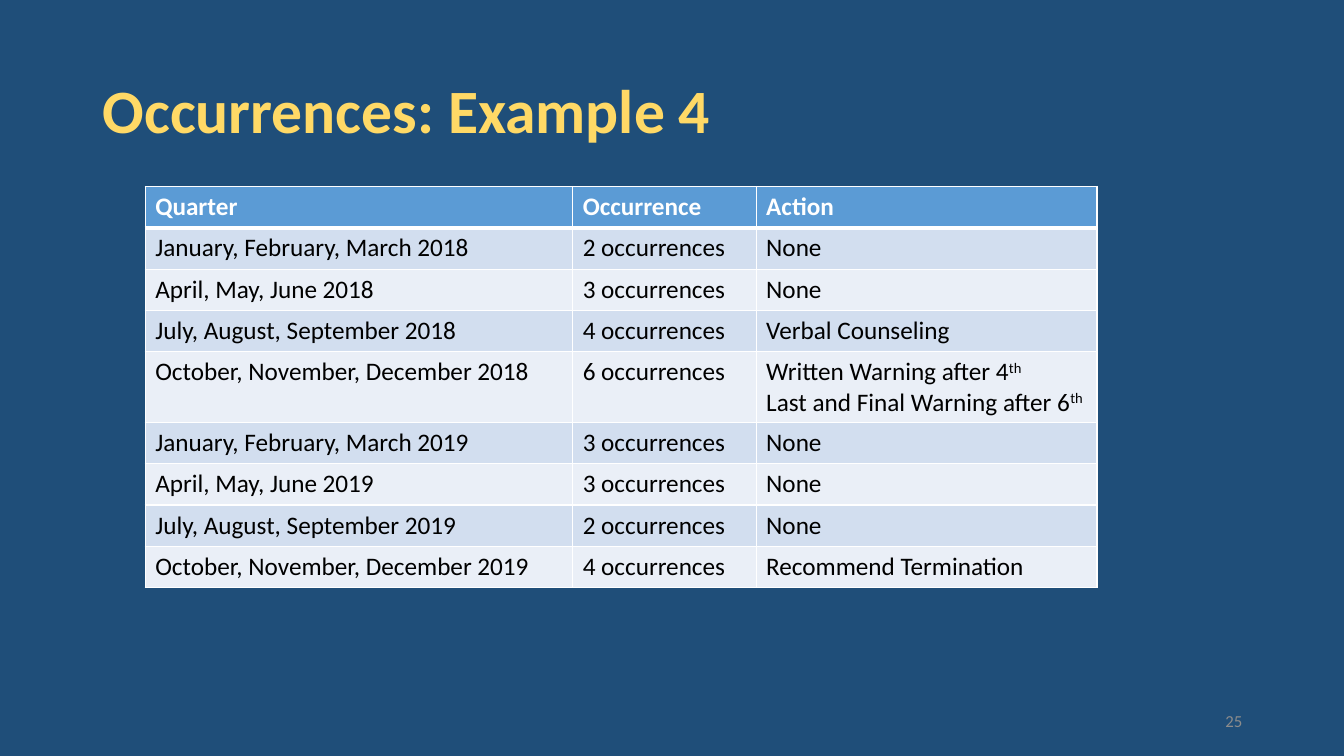
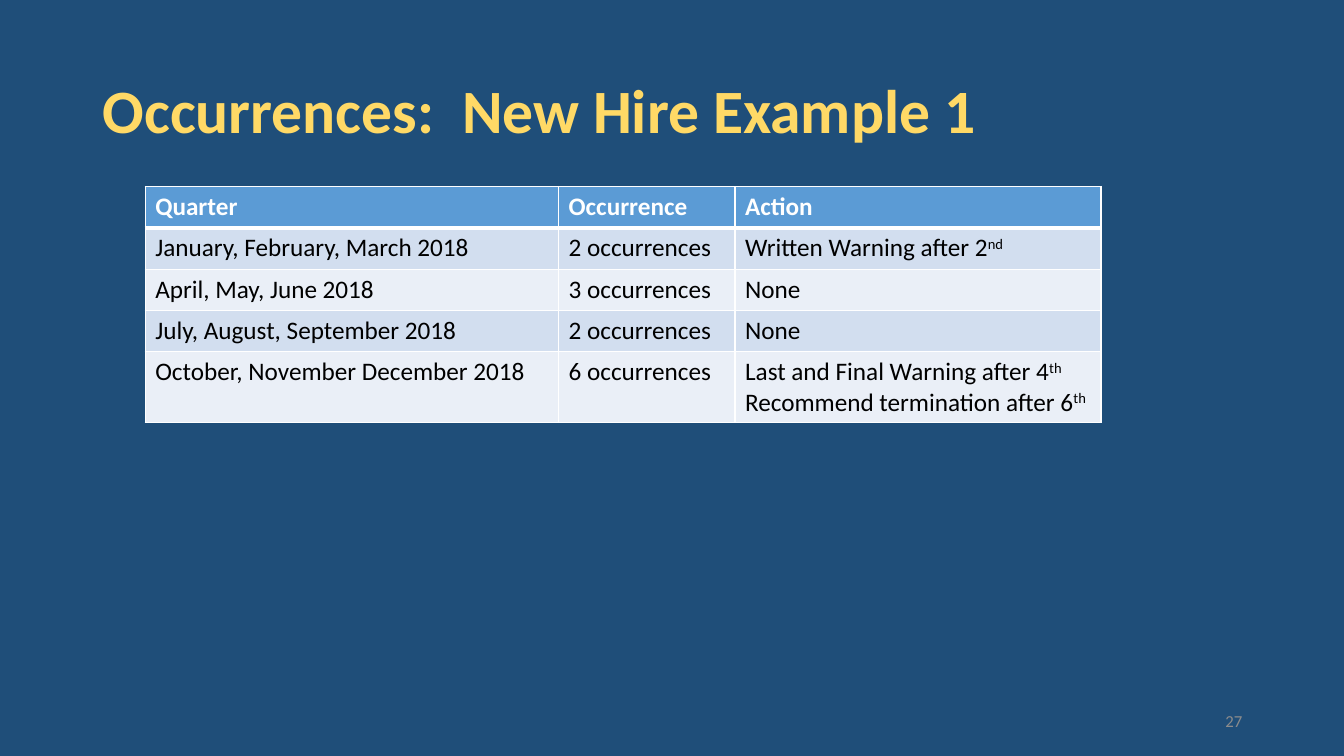
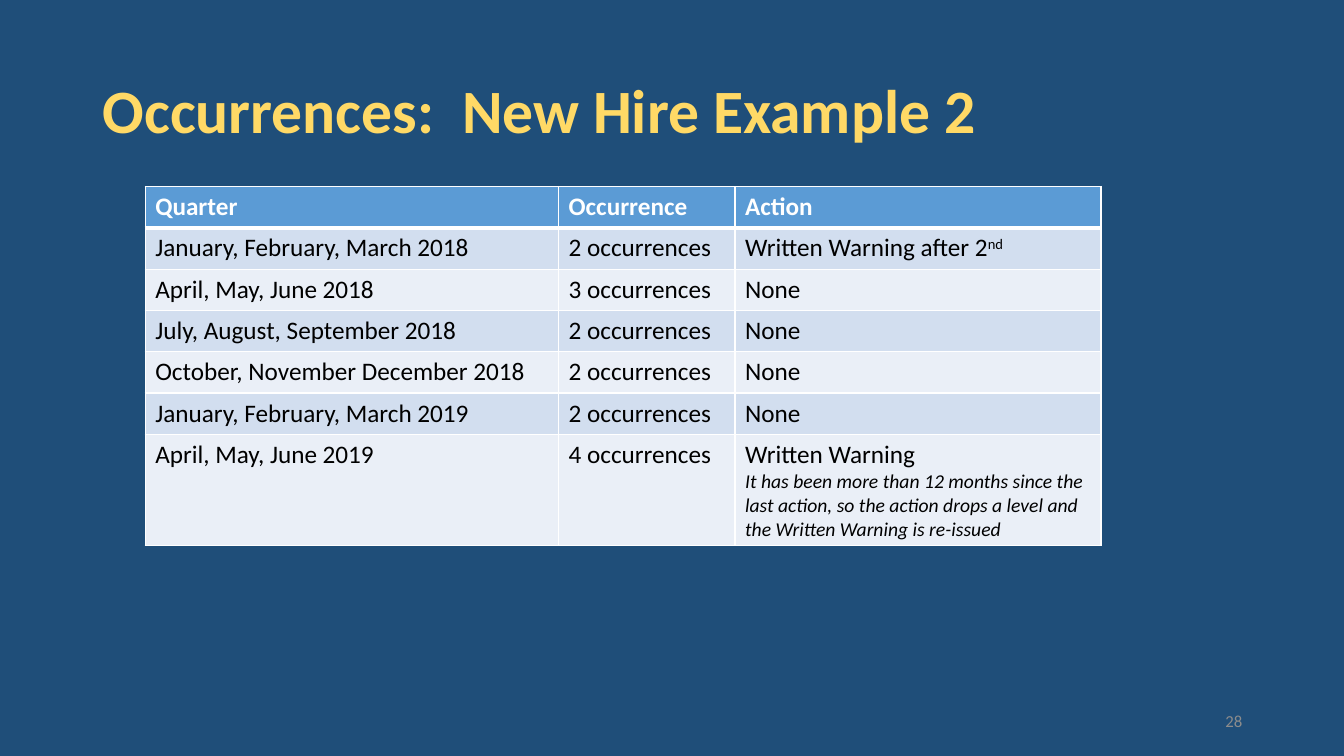
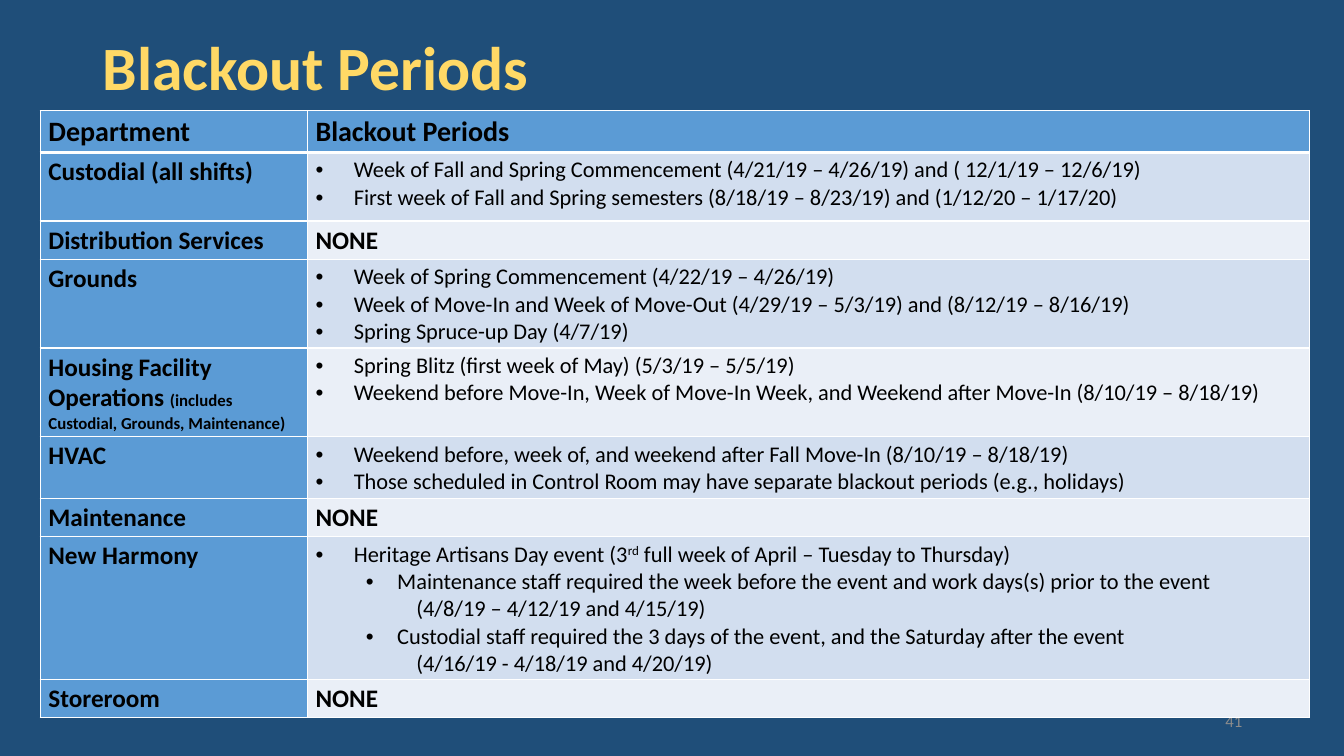
from lxml.etree import SubElement
from pptx import Presentation
from pptx.dml.color import RGBColor
from pptx.enum.text import MSO_ANCHOR, PP_ALIGN
from pptx.oxml import parse_xml
from pptx.oxml.ns import nsdecls, qn
from pptx.util import Pt

PX = 9144  # 100 px to the inch
FACE = "Calibri"
INK = {
    "back": "1F4E79", "title": "FFD966", "head": "5B9BD5",
    "odd": "D2DEEF", "even": "EAEFF7",
    "white": "FFFFFF", "black": "000000", "grey": "8C8C8C",
}
# Left margin, first-line indent, tab stop and bullet of each list style
LISTS = {
    "dot": (38, -38, 50, "•"),
    "sub": (81, -31, 100, "•"),
    "note": (100, 0, None, None),
}

HEADS = ("Quarter", "Occurrence", "Action")
COUNTS = [
    ("Occurrences: Example 4", 25, (424, 182, 338), [
        ("January, February, March 2018", 2, "None"),
        ("April, May, June 2018", 3, "None"),
        ("July, August, September 2018", 4, "Verbal Counseling"),
        ("October, November, December 2018", 6,
         "Written Warning after 4^th", "Last and Final Warning after 6^th"),
        ("January, February, March 2019", 3, "None"),
        ("April, May, June 2019", 3, "None"),
        ("July, August, September 2019", 2, "None"),
        ("October, November, December 2019", 4, "Recommend Termination"),
    ]),
    ("Occurrences:  New Hire Example 1", 27, (410, 175, 363), [
        ("January, February, March 2018", 2, "Written Warning after 2^nd"),
        ("April, May, June 2018", 3, "None"),
        ("July, August, September 2018", 2, "None"),
        ("October, November December 2018", 6,
         "Last and Final Warning after 4^th",
         "Recommend termination after 6^th"),
    ]),
    ("Occurrences:  New Hire Example 2", 28, (410, 175, 363), [
        ("January, February, March 2018", 2, "Written Warning after 2^nd"),
        ("April, May, June 2018", 3, "None"),
        ("July, August, September 2018", 2, "None"),
        ("October, November December 2018", 2, "None"),
        ("January, February, March 2019", 2, "None"),
        ("April, May, June 2019", 4, "Written Warning",
         "*It has been more than 12 months since the last action, so the "
         "action drops a level and the Written Warning is re-issued"),
    ]),
]

# Department, small print, row height, list of (style, text)
PERIODS = [
    ("Custodial (all shifts)", "", 68, [
        ("dot", "Week of Fall and Spring Commencement (4/21/19 – 4/26/19) "
                "and ( 12/1/19 – 12/6/19)"),
        ("dot", "First week of Fall and Spring semesters (8/18/19 – 8/23/19) "
                "and (1/12/20 – 1/17/20)"),
    ]),
    ("Distribution Services", "", 34, []),
    ("Grounds", "", 68, [
        ("dot", "Week of Spring Commencement (4/22/19 – 4/26/19)"),
        ("dot", "Week of Move-In and Week of Move-Out (4/29/19 – 5/3/19) "
                "and (8/12/19 – 8/16/19)"),
        ("dot", "Spring Spruce-up Day (4/7/19)"),
    ]),
    ("Housing Facility Operations ",
     "(includes Custodial, Grounds, Maintenance)", 48, [
         ("dot", "Spring Blitz (first week of May) (5/3/19 – 5/5/19)"),
         ("dot", "Weekend before Move-In, Week of Move-In Week, and Weekend "
                 "after Move-In (8/10/19 – 8/18/19)"),
     ]),
    ("HVAC", "", 48, [
        ("dot", "Weekend before, week of, and weekend after Fall Move-In "
                "(8/10/19 – 8/18/19)"),
        ("dot", "Those scheduled in Control Room may have separate blackout "
                "periods (e.g., holidays)"),
    ]),
    ("Maintenance", "", 34, []),
    ("New Harmony", "", 107, [
        ("dot", "Heritage Artisans Day event (3^rd^ full week of April – "
                "Tuesday to Thursday)"),
        ("sub", "Maintenance staff required the week before the event and "
                "work days(s) prior to the event"),
        ("note", "(4/8/19 – 4/12/19 and 4/15/19)"),
        ("sub", "Custodial staff required the 3 days of the event, and the "
                "Saturday after the event"),
        ("note", "(4/16/19 - 4/18/19 and 4/20/19)"),
    ]),
    ("Storeroom", "", 34, []),
]


def rgb(name):
    return RGBColor.from_string(INK[name])


def indent(para, style):
    left, first, tab, mark = LISTS[style]
    props = para._p.get_or_add_pPr()
    props.set("marL", str(left * PX))
    props.set("indent", str(first * PX))
    if mark:
        SubElement(props, qn("a:buFont"), typeface="Arial")
        SubElement(props, qn("a:buChar"), char=mark)
        tabs = SubElement(props, qn("a:tabLst"))
        SubElement(tabs, qn("a:tab"), pos=str(tab * PX), algn="l")
    if style == "sub":
        para.level = 1


def write(frame, text, size, ink="black", bold=False, style=None):
    """Add a paragraph; text between carets is raised."""
    para = frame.add_paragraph() if frame.text else frame.paragraphs[0]
    if style:
        indent(para, style)
    font = para.font
    font.name, font.size, font.bold = FACE, Pt(size), bold
    font.color.rgb = rgb(ink)
    for place, part in enumerate(text.split("^")):
        if part:
            run = para.add_run()
            run.text = part
            if place % 2:
                run._r.get_or_add_rPr().set("baseline", "30000")
    return para


def label(slide, box, text, size, ink, bold=False):
    frame = slide.shapes.add_textbox(*(n * PX for n in box)).text_frame
    frame.word_wrap = True
    frame.vertical_anchor = MSO_ANCHOR.MIDDLE
    return write(frame, text, size, ink, bold)


def base(deck, title, number, top=40):
    """Slide with background, title and page number."""
    slide = deck.slides.add_slide(deck.slide_layouts[6])
    fill = slide.background.fill
    fill.solid()
    fill.fore_color.rgb = rgb("back")
    label(slide, (92, top, 1150, 145), title, 44, "title", True).line_spacing = 0.9
    label(slide, (942, 695, 300, 40), str(number), 12, "grey").alignment = PP_ALIGN.RIGHT
    return slide


def edge(cell, row):
    """White rules, thick between the head and the body."""
    props = cell._tc.get_or_add_tcPr()
    thick = {"T": row == 1, "B": row == 0}
    for place, side in enumerate("LRTB"):
        wide = Pt(3 if thick.get(side) else 1)
        props.insert(place, parse_xml(
            f'<a:ln{side} {nsdecls("a")} w="{wide}"><a:solidFill>'
            f'<a:srgbClr val="{INK["white"]}"/></a:solidFill></a:ln{side}>'))


def grid(slide, left, top, cols, rows, side=False, pad=10):
    """Banded table; side fills the first column like the head."""
    box = (left, top, sum(cols), sum(rows))
    table = slide.shapes.add_table(
        len(rows), len(cols), *(n * PX for n in box)).table
    table.first_row = table.horz_banding = False
    for col, wide in zip(table.columns, cols):
        col.width = wide * PX
    for r, (row, high) in enumerate(zip(table.rows, rows)):
        row.height = high * PX
        for c, cell in enumerate(row.cells):
            head = r == 0 or (side and c == 0)
            cell.fill.solid()
            cell.fill.fore_color.rgb = rgb(
                "head" if head else "odd" if r % 2 else "even")
            cell.margin_left = cell.margin_right = pad * PX
            cell.margin_top = cell.margin_bottom = pad // 2 * PX
            edge(cell, r)
    return table


def counts(deck, title, number, cols, data):
    """Occurrences by quarter."""
    slide = base(deck, title, number)
    table = grid(slide, 144, 185, cols, [41] * (len(data) + 1))
    for c, text in enumerate(HEADS):
        write(table.cell(0, c).text_frame, text, 18, "white", True)
    for r, (term, count, *acts) in enumerate(data, 1):
        frames = [table.cell(r, c).text_frame for c in range(3)]
        write(frames[0], term, 18)
        write(frames[1], f"{count} occurrences", 18)
        for act in acts:
            note = act.startswith("*")
            para = write(frames[2], act.lstrip("*"), 14 if note else 18)
            para.font.italic = note


def periods(deck):
    """Blackout periods by department."""
    slide = base(deck, "Blackout Periods", 41, -3)
    rows = [34] + [high for _, _, high, _ in PERIODS]
    table = grid(slide, 40, 110, (265, 994), rows, True, 8)
    for c, text in enumerate(("Department", "Blackout Periods")):
        write(table.cell(0, c).text_frame, text, 20, bold=True)
    for r, (name, small, _, items) in enumerate(PERIODS, 1):
        para = write(table.cell(r, 0).text_frame, name, 18, bold=True)
        if small:
            run = para.add_run()
            run.text = small
            run.font.size = Pt(12)
        frame = table.cell(r, 1).text_frame
        for style, text in items:
            write(frame, text, 16, style=style)
        if not items:
            write(frame, "NONE", 18, bold=True)


def main():
    deck = Presentation()
    deck.slide_width, deck.slide_height = 1333 * PX, 750 * PX
    for page in COUNTS:
        counts(deck, *page)
    periods(deck)
    deck.save("out.pptx")


if __name__ == "__main__":
    main()
